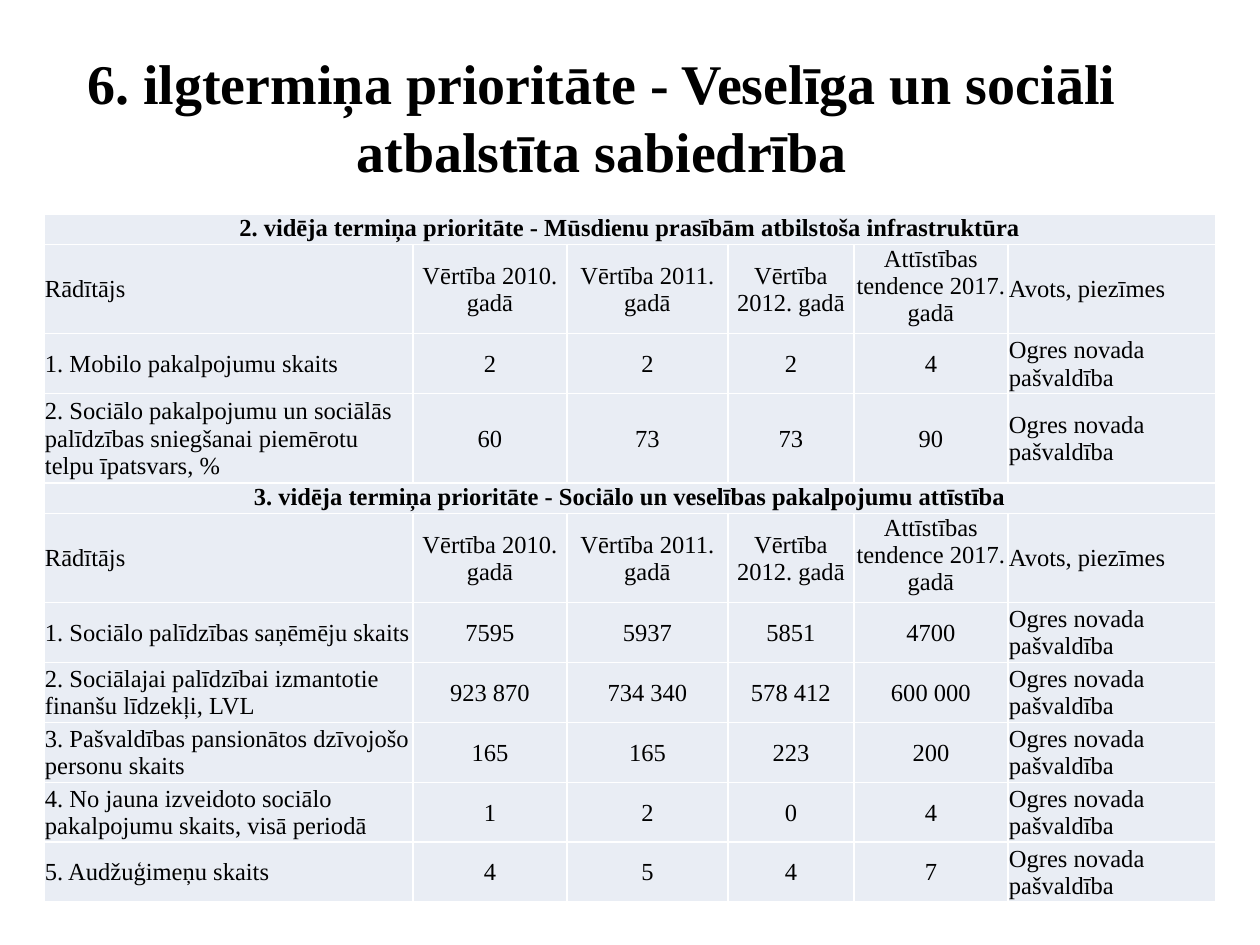
from dataclasses import dataclass

from lxml.etree import SubElement
from pptx import Presentation
from pptx.dml.color import RGBColor
from pptx.enum.text import MSO_ANCHOR, PP_ALIGN
from pptx.oxml.ns import qn
from pptx.table import Table, _Cell
from pptx.text.text import TextFrame
from pptx.util import Emu, Pt

PX_PER_INCH = 126
FONT = "Times New Roman"
COLORS = {"text": "000000", "cell": "E9EDF4", "border": "FFFFFF"}
COLUMN_WIDTHS = [369, 154, 161, 126, 154, 208]
HEADING_HEIGHT, HEADER_HEIGHT = 30, 89
TREND_COLUMN = 4
HEADERS = (
    "Rādītājs",
    "Vērtība 2010. gadā",
    "Vērtība 2011. gadā",
    "Vērtība 2012. gadā",
    "Attīstības tendence 2017. gadā",
    "Avots, piezīmes",
)
SOURCE = "Ogres novada pašvaldība"


@dataclass(frozen=True)
class Indicator:
    name: str
    values: tuple[str, str, str, str]
    height: int = 59


@dataclass(frozen=True)
class Priority:
    heading: str
    indicators: tuple[Indicator, ...]


PRIORITIES = [
    Priority("2. vidēja termiņa prioritāte - Mūsdienu prasībām atbilstoša infrastruktūra", (
        Indicator("1. Mobilo pakalpojumu skaits", ("2", "2", "2", "4")),
        Indicator("2. Sociālo pakalpojumu un sociālās palīdzības sniegšanai "
                  "piemērotu telpu īpatsvars, %", ("60", "73", "73", "90"), height=89),
    )),
    Priority("3. vidēja termiņa prioritāte - Sociālo un veselības pakalpojumu attīstība", (
        Indicator("1. Sociālo palīdzības saņēmēju skaits", ("7595", "5937", "5851", "4700")),
        Indicator("2. Sociālajai palīdzībai izmantotie finanšu līdzekļi, LVL",
                  ("923 870", "734 340", "578 412", "600 000")),
        Indicator("3. Pašvaldības pansionātos dzīvojošo personu skaits",
                  ("165", "165", "223", "200")),
        Indicator("4. No jauna izveidoto sociālo pakalpojumu skaits, visā periodā",
                  ("1", "2", "0", "4")),
        Indicator("5. Audžuģimeņu skaits", ("4", "5", "4", "7")),
    )),
]


def px(length: int) -> Emu:
    return Emu(round(length * 914400 / PX_PER_INCH))


def write_text(frame: TextFrame, text: str, *, size: int = 14, bold: bool = False,
               align: PP_ALIGN = PP_ALIGN.CENTER) -> None:
    frame.word_wrap = True
    paragraph = frame.paragraphs[0]
    paragraph.alignment = align
    run = paragraph.add_run()
    run.text = text
    run.font.name = FONT
    run.font.size = Pt(size)
    run.font.bold = bold
    run.font.color.rgb = RGBColor.from_string(COLORS["text"])


def style_cell(cell: _Cell) -> None:
    cell.margin_left = cell.margin_right = cell.margin_top = px(1)
    cell.margin_bottom = 0
    properties = cell._tc.get_or_add_tcPr()
    # Borders come before the fill in the cell properties
    for side in ("lnL", "lnR", "lnT", "lnB"):
        line = SubElement(properties, qn(f"a:{side}"), w=str(Pt(1)))
        fill = SubElement(line, qn("a:solidFill"))
        SubElement(fill, qn("a:srgbClr"), val=COLORS["border"])
    cell.fill.solid()
    cell.fill.fore_color.rgb = RGBColor.from_string(COLORS["cell"])


def fill_heading(table: Table, row: int, heading: str) -> None:
    table.rows[row].height = px(HEADING_HEIGHT)
    first = table.cell(row, 0)
    first.merge(table.cell(row, len(COLUMN_WIDTHS) - 1))
    write_text(first.text_frame, heading, bold=True)


def fill_row(table: Table, row: int, texts: tuple[str, ...], height: int) -> None:
    table.rows[row].height = px(height)
    for column, text in enumerate(texts):
        cell = table.cell(row, column)
        is_outer = column in (0, len(texts) - 1)
        is_trend_header = texts is HEADERS and column == TREND_COLUMN
        cell.vertical_anchor = MSO_ANCHOR.TOP if is_trend_header else MSO_ANCHOR.MIDDLE
        write_text(cell.text_frame, text,
                   align=PP_ALIGN.LEFT if is_outer else PP_ALIGN.CENTER)


def main() -> None:
    presentation = Presentation()
    presentation.slide_width, presentation.slide_height = px(1260), px(945)
    slide = presentation.slides.add_slide(presentation.slide_layouts[6])

    # Title
    title = slide.shapes.add_textbox(px(35), px(37), px(1134), px(158)).text_frame
    title.vertical_anchor = MSO_ANCHOR.MIDDLE
    write_text(title, "6. ilgtermiņa prioritāte - Veselīga un sociāli atbalstīta sabiedrība",
               size=32, bold=True)

    # Table of indicators
    row_count = sum(2 + len(priority.indicators) for priority in PRIORITIES)
    table = slide.shapes.add_table(row_count, len(COLUMN_WIDTHS), px(44), px(214),
                                   px(sum(COLUMN_WIDTHS)), px(684)).table
    table.first_row = table.horz_banding = False
    for column, width in zip(table.columns, COLUMN_WIDTHS):
        column.width = px(width)
    for cell in table.iter_cells():
        style_cell(cell)

    # One heading, header row and set of indicators for each priority
    row = 0
    for priority in PRIORITIES:
        fill_heading(table, row, priority.heading)
        fill_row(table, row + 1, HEADERS, HEADER_HEIGHT)
        row += 2
        for indicator in priority.indicators:
            fill_row(table, row, (indicator.name, *indicator.values, SOURCE), indicator.height)
            row += 1

    presentation.save("out.pptx")


if __name__ == "__main__":
    main()
